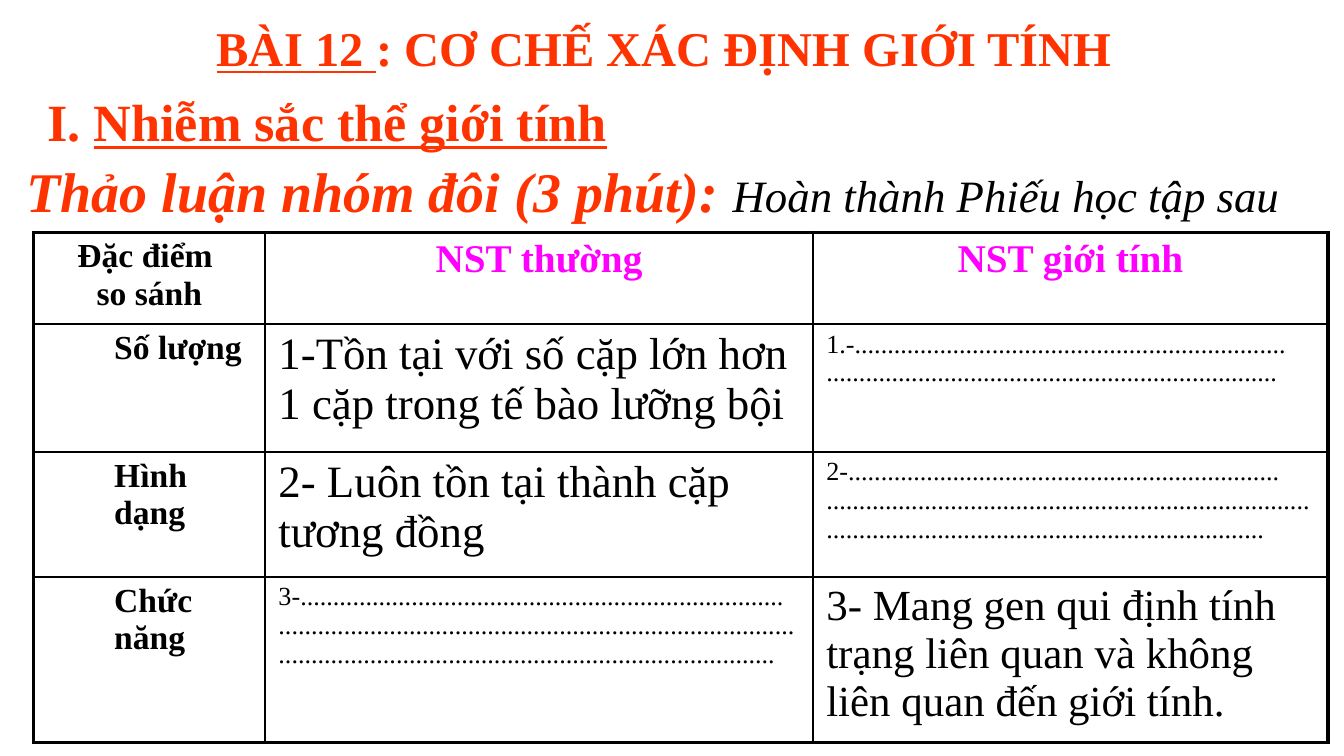
from lxml import etree
from pptx import Presentation
from pptx.dml.color import RGBColor
from pptx.enum import text
from pptx.oxml import ns
from pptx.util import Pt

RED = RGBColor(0xFF, 0x33, 0x00)
PINK = RGBColor(0xFF, 0x00, 0xFF)
BLACK = RGBColor(0, 0, 0)
WHITE = RGBColor(0xFF, 0xFF, 0xFF)
FACE = "Times New Roman"
LEFT, MID = text.PP_ALIGN.LEFT, text.PP_ALIGN.CENTER

COLS = (124, 293.5, 276)
ROWS = (49, 68.5, 67, 88.5)
THIN, THICK = 1, 2.25
# Each cell: paragraphs, text size
CELLS = (
    ((("Đặc điểm ", "so sánh"), 18), (("NST thường",), 21),
     (("NST giới tính",), 21)),
    ((("Số lượng",), 18),
     (("1-Tồn tại với số cặp lớn hơn 1 cặp trong tế bào lưỡng bội",), 24),
     (("1.-" + "." * 66, "." * 69), 14)),
    ((("Hình dạng",), 18),
     (("2- Luôn tồn tại thành cặp tương đồng",), 24),
     (("2-" + "." * 66, "." * 141), 14)),
    ((("Chức năng",), 18),
     (("3-" + "." * 74, "." * 155), 14),
     (("3- Mang gen qui định tính trạng liên quan và không "
       "liên quan đến giới tính.",), 23)),
)


def style(font, size, color, bold=False):
    font.name, font.size, font.bold = FACE, Pt(size), bold
    font.color.rgb = color


def add_run(para, words, size, color, bold=True, line=False, slant=False):
    run = para.add_run()
    run.text = words
    style(run.font, size, color, bold)
    run.font.underline, run.font.italic = line, slant


def place(shape, box):
    shape.left, shape.top, shape.width, shape.height = map(Pt, box)


def add_title(slide, box):
    title = slide.shapes.title
    place(title, box)
    title.fill.solid()
    title.fill.fore_color.rgb = WHITE
    title.line.color.rgb = WHITE
    title.line.width = Pt(0.75)
    frame = title.text_frame
    frame.auto_size = text.MSO_AUTO_SIZE.NONE
    frame.vertical_anchor = text.MSO_ANCHOR.TOP
    para = frame.paragraphs[0]
    para.alignment, para.space_before = MID, Pt(4.5)
    add_run(para, "BÀI 12 ", 26, RED, line=True)
    add_run(para, ": CƠ CHẾ XÁC ĐỊNH GIỚI TÍNH", 26, RED)
    add_run(para, " ", 32, RED)


def add_line(slide, box, align):
    """Add a one-line text box and return its paragraph."""
    frame = slide.shapes.add_textbox(*map(Pt, box)).text_frame
    frame.word_wrap = True
    frame.auto_size = text.MSO_AUTO_SIZE.SHAPE_TO_FIT_TEXT
    para = frame.paragraphs[0]
    para.alignment, para.space_before = align, Pt(3.5)
    return para


def add_section(slide, box):
    para = add_line(slide, box, MID)
    add_run(para, "I. ", 28, RED)
    add_run(para, "Nhiễm sắc thể giới tính", 28, RED, line=True)
    add_run(para, " ", 30, RED)


def add_task(slide, box):
    para = add_line(slide, box, LEFT)
    add_run(para, "Thảo luận nhóm đôi (3 phút): ", 30, RED, slant=True)
    add_run(para, "Hoàn thành Phiếu học tập sau", 24, BLACK, False, slant=True)


def set_edges(cell, row, col):
    """Draw thick lines on the table's rim and thin ones inside."""
    rim = {"lnL": col == 0, "lnR": col == len(COLS) - 1,
           "lnT": row == 0, "lnB": row == len(ROWS) - 1}
    props = cell._tc.get_or_add_tcPr()
    for spot, (tag, outer) in enumerate(rim.items()):
        edge = etree.Element(ns.qn("a:" + tag),
                             w=str(Pt(THICK if outer else THIN)))
        fill = etree.SubElement(edge, ns.qn("a:solidFill"))
        etree.SubElement(fill, ns.qn("a:srgbClr"), val=str(BLACK))
        props.insert(spot, edge)


def fill_cell(cell, row, col):
    lines, size = CELLS[row][col]
    cell.fill.background()
    cell.margin_top = cell.margin_bottom = Pt(3)
    cell.text_frame.text = "\n".join(lines)
    for para in cell.text_frame.paragraphs:
        para.alignment = LEFT if row else MID
        color = PINK if row == 0 and col else BLACK
        style(para.font, size, color, row == 0 or col == 0)
        if row and col == 0:
            para._p.get_or_add_pPr().set("marL", str(Pt(36)))
    set_edges(cell, row, col)


def add_sheet(slide, left, top):
    box = map(Pt, (left, top, sum(COLS), sum(ROWS)))
    table = slide.shapes.add_table(len(ROWS), len(COLS), *box).table
    table.first_row = table.horz_banding = False
    for col, width in enumerate(COLS):
        table.columns[col].width = Pt(width)
    for row, height in enumerate(ROWS):
        table.rows[row].height = Pt(height)
        for col in range(len(COLS)):
            fill_cell(table.cell(row, col), row, col)


def main():
    deck = Presentation()
    deck.slide_width, deck.slide_height = Pt(720), Pt(405)
    slide = deck.slides.add_slide(deck.slide_layouts[5])
    add_title(slide, (0, 0, 720, 405))
    add_section(slide, (2, 42.5, 354, 44))
    add_task(slide, (7, 80.5, 720, 44))
    add_sheet(slide, 18, 124.5)
    deck.save("out.pptx")


if __name__ == "__main__":
    main()
